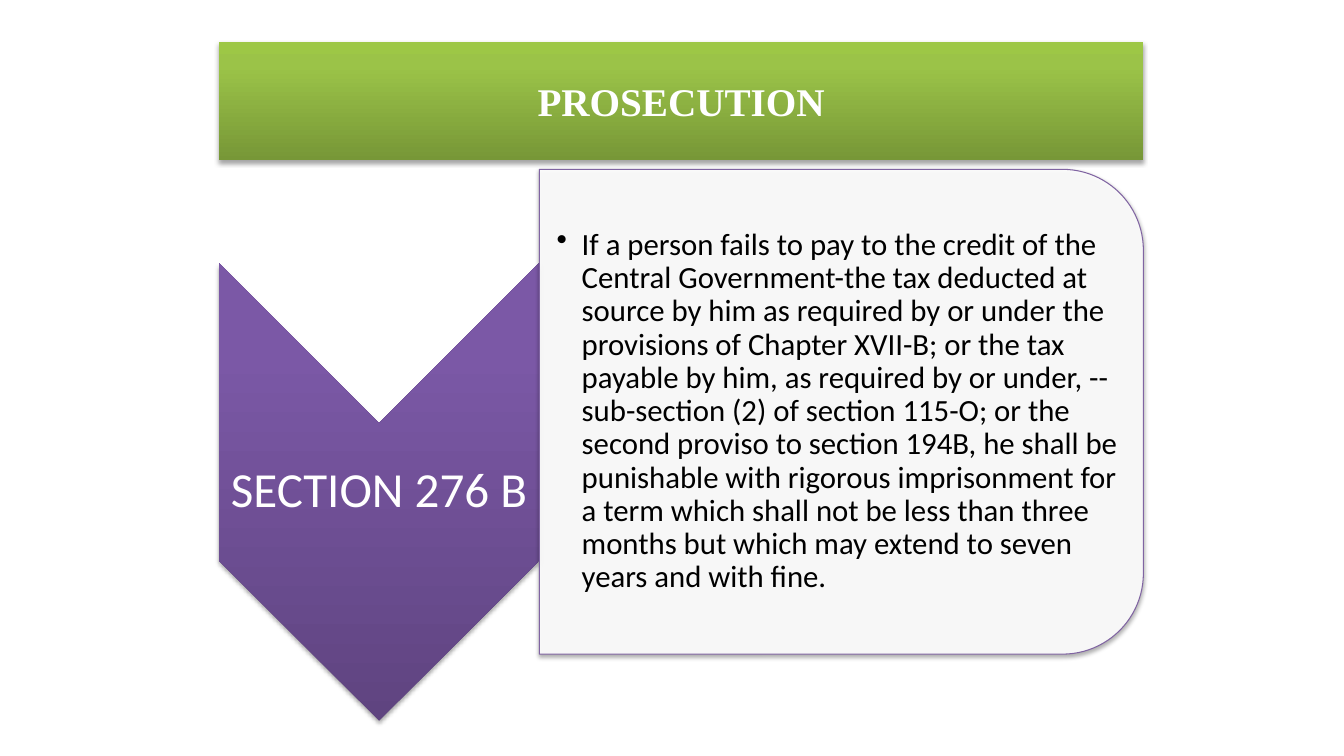
"""Build the PROSECUTION slide: a title band, a section arrow and its provision."""
from lxml import etree
from pptx import Presentation
from pptx.dml.color import RGBColor
from pptx.enum.shapes import MSO_SHAPE
from pptx.enum.text import MSO_ANCHOR, MSO_AUTO_SIZE, PP_ALIGN
from pptx.oxml.ns import qn
from pptx.util import Inches, Pt

CHEVRON, ROUNDED_END = MSO_SHAPE.CHEVRON, MSO_SHAPE.ROUND_2_SAME_RECTANGLE
MIDDLE, NO_FIT = MSO_ANCHOR.MIDDLE, MSO_AUTO_SIZE.NONE
CENTER, LEFT = PP_ALIGN.CENTER, PP_ALIGN.LEFT

TITLE = "PROSECUTION"
SECTION = "SECTION 276 B"
PROVISION = (
    "If a person fails to pay to the credit of the Central Government-the tax "
    "deducted at source by him as required by or under the provisions of Chapter "
    "XVII-B; or the tax payable by him, as required by or under, -- sub-section (2) "
    "of section 115-O; or the second proviso to section 194B, he shall be punishable "
    "with rigorous imprisonment for a term which shall not be less than three months "
    "but which may extend to seven years and with fine."
)
COLORS = {"white": "FFFFFF", "black": "000000", "purple": "8064A2"}
GREEN_STOPS = [(0, "779737"), (80, "9BC348"), (100, "9DC746")]
PURPLE_STOPS = [(0, "5F4480"), (80, "7B58A6"), (100, "7C57A8")]

WIDTH, HEIGHT = 13.33, 7.5
BAND_LEFT, BAND_WIDTH = 2.17, 9.17
ARROW_WIDTH, ARROW_HEIGHT, ARROW_TOP = 3.18, 4.54, 2.61
PANEL_LEFT, PANEL_TOP, PANEL_HEIGHT = BAND_LEFT + ARROW_WIDTH, 1.68, 4.81
PANEL_WIDTH = BAND_WIDTH - ARROW_WIDTH
ARROW_NOTCH = ARROW_WIDTH / 2
CORNER = PANEL_HEIGHT / 6
CORNER_INSET = CORNER * 0.29
INSET = 0.02


def rgb(name):
    return RGBColor.from_string(COLORS[name])


def add_child(parent, tag, **attributes):
    return etree.SubElement(parent, qn(tag), attributes)


def add_shadow(shape):
    shape.shadow.inherit = False
    effects = shape._element.spPr.find(qn("a:effectLst"))
    shadow = add_child(effects, "a:outerShdw", blurRad=str(Pt(3.1)),
                       dist=str(Pt(1.8)), dir="5400000", rotWithShape="0")
    color = add_child(shadow, "a:srgbClr", val=COLORS["black"])
    add_child(color, "a:alpha", val="35000")


def fill_gradient(shape, stops):
    shape.fill.gradient()
    gradient = shape._element.spPr.find(qn("a:gradFill"))
    gradient.set("rotWithShape", "0")
    for child in list(gradient):
        gradient.remove(child)
    stop_list = add_child(gradient, "a:gsLst")
    for share, color in stops:
        stop = add_child(stop_list, "a:gs", pos=str(share * 1000))
        add_child(stop, "a:srgbClr", val=color)
    add_child(gradient, "a:lin", ang="16200000", scaled="0")


def add_turned(group, kind, left, top, width, height):
    """Add a shape turned by 90 degrees that covers the given visible box."""
    shift = (width - height) / 2
    shape = group.shapes.add_shape(kind, Inches(left + shift), Inches(top - shift),
                                   Inches(height), Inches(width))
    shape.rotation = 90
    return shape


def set_text(shape, text, size, font, color, align, left_inset=INSET):
    frame = shape.text_frame
    frame.text = text
    frame.word_wrap, frame.auto_size, frame.vertical_anchor = True, NO_FIT, MIDDLE
    frame.margin_left = Inches(left_inset)
    frame.margin_top = frame.margin_right = frame.margin_bottom = Inches(INSET)
    paragraph = frame.paragraphs[0]
    paragraph.alignment = align
    paragraph.font.size, paragraph.font.name = Pt(size), font
    paragraph.font.color.rgb = rgb(color)
    return paragraph


def add_label(group, left, top, width, height):
    return group.shapes.add_textbox(*map(Inches, (left, top, width, height)))


def main():
    prs = Presentation()
    prs.slide_width, prs.slide_height = Inches(WIDTH), Inches(HEIGHT)
    slide = prs.slides.add_slide(prs.slide_layouts[5])

    band = slide.shapes.title
    band.left, band.top = Inches(BAND_LEFT), Inches(0.42)
    band.width, band.height = Inches(BAND_WIDTH), Inches(1.17)
    fill_gradient(band, GREEN_STOPS)
    add_shadow(band)
    set_text(band, TITLE, 28, "Times New Roman", "white", CENTER).font.bold = True

    group = slide.shapes.add_group_shape()
    arrow = add_turned(group, CHEVRON, BAND_LEFT, ARROW_TOP, ARROW_WIDTH, ARROW_HEIGHT)
    fill_gradient(arrow, PURPLE_STOPS)
    arrow.line.fill.background()
    add_shadow(arrow)
    section = add_label(group, BAND_LEFT, ARROW_TOP + ARROW_NOTCH, ARROW_WIDTH,
                        ARROW_HEIGHT - 2 * ARROW_NOTCH)
    set_text(section, SECTION, 35, "Calibri", "white", CENTER).line_spacing = 0.9

    panel = add_turned(group, ROUNDED_END, PANEL_LEFT, PANEL_TOP, PANEL_WIDTH, PANEL_HEIGHT)
    panel.fill.solid()
    panel.fill.fore_color.rgb = rgb("white")
    fill_color = panel._element.spPr.find(qn("a:solidFill")).find(qn("a:srgbClr"))
    add_child(fill_color, "a:alpha", val="90000")
    panel.line.color.rgb, panel.line.width = rgb("purple"), Pt(0.75)
    add_shadow(panel)

    provision = add_label(group, PANEL_LEFT, PANEL_TOP + CORNER_INSET,
                          PANEL_WIDTH - CORNER_INSET, PANEL_HEIGHT - 2 * CORNER_INSET)
    paragraph = set_text(provision, PROVISION, 22, "Calibri", "black", LEFT, 0.17)
    paragraph.line_spacing = 0.9
    properties = paragraph._p.get_or_add_pPr()
    properties.set("marL", str(Inches(0.25)))
    properties.set("indent", str(-Inches(0.25)))
    bullet = etree.Element(qn("a:buChar"), char="•")
    properties.find(qn("a:lnSpc")).addnext(bullet)

    prs.save("out.pptx")


if __name__ == "__main__":
    main()
